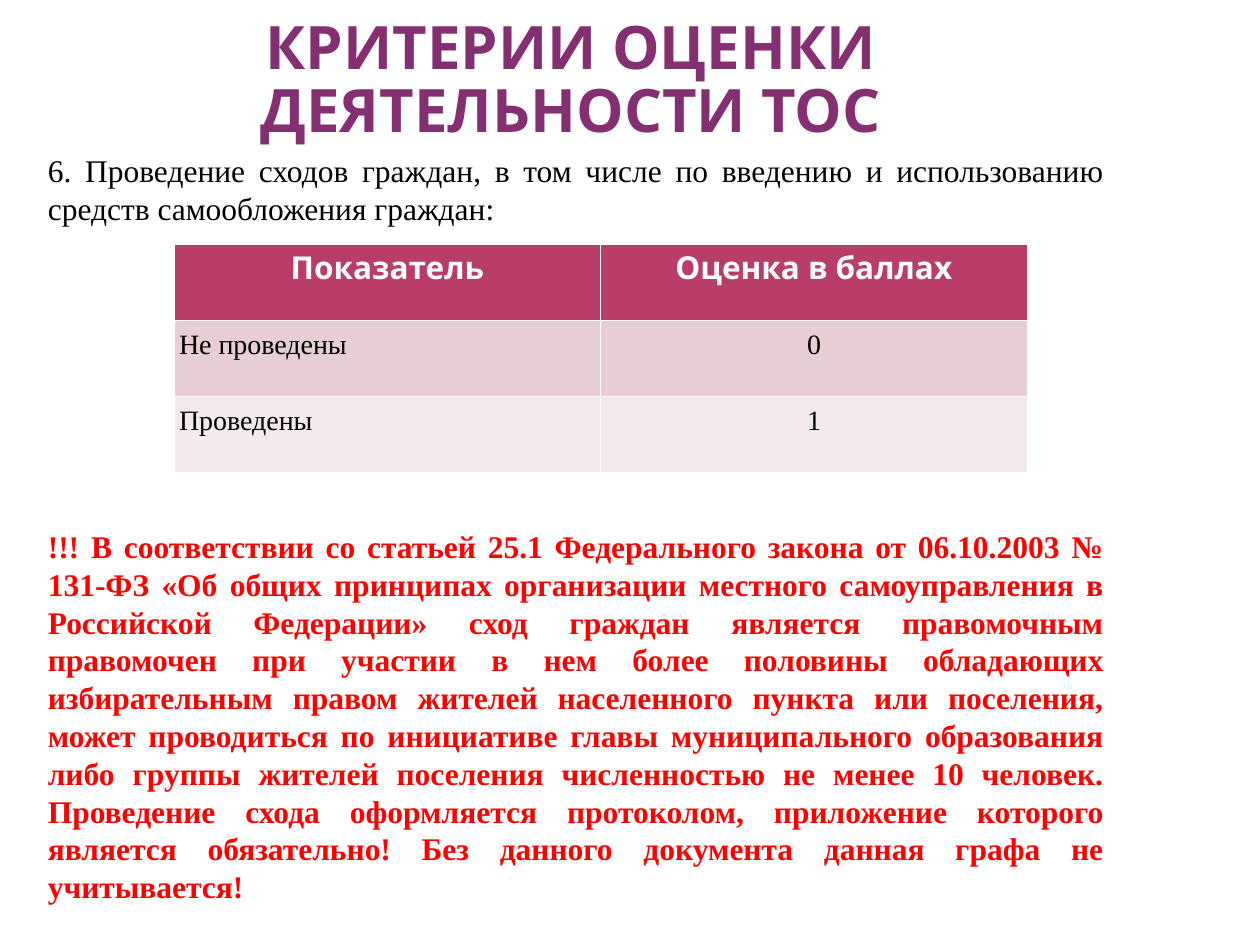
"""Builds the slide with the criteria for assessing TOS activity."""
from dataclasses import dataclass

from lxml.etree import SubElement
from pptx import Presentation
from pptx.dml.color import RGBColor as Rgb
from pptx.enum.text import MSO_ANCHOR as Anchor, MSO_AUTO_SIZE as AutoSize, PP_ALIGN as Align
from pptx.oxml.ns import qn
from pptx.util import Cm, Pt


@dataclass(frozen=True)
class Theme:
    heading_font: str = "Karla"
    text_font: str = "Times New Roman"
    title_size: float = 34.2
    text_size: float = 18
    score_size: float = 16
    title: str = "852F73"
    text: str = "000000"
    warning: str = "FF0000"
    header_text: str = "FFFFFF"
    header_fill: str = "B83D68"
    band_fills: tuple[str, str] = ("E6CED4", "F3E8EB")


@dataclass(frozen=True)
class Box:
    left: float
    top: float
    width: float
    height: float

    def lengths(self) -> tuple:
        return Cm(self.left), Cm(self.top), Cm(self.width), Cm(self.height)


@dataclass(frozen=True)
class TextStyle:
    font: str
    size: float
    color: str
    bold: bool = False


@dataclass(frozen=True)
class Criterion:
    label: str
    score: str


THEME = Theme()
TITLE_STYLE = TextStyle(THEME.heading_font, THEME.title_size, THEME.title, True)
INTRO_STYLE = TextStyle(THEME.text_font, THEME.text_size, THEME.text)
WARNING_STYLE = TextStyle(THEME.text_font, THEME.text_size, THEME.warning, True)
HEADER_STYLE = TextStyle(THEME.heading_font, THEME.text_size, THEME.header_text, True)
SCORE_STYLE = TextStyle(THEME.text_font, THEME.score_size, THEME.text)

TITLE = "КРИТЕРИИ ОЦЕНКИ ДЕЯТЕЛЬНОСТИ ТОС"
INTRO = (
    "6. Проведение сходов граждан, в том числе по введению и использованию "
    "средств самообложения граждан:"
)
WARNING = (
    "!!! В соответствии со статьей 25.1 Федерального закона от 06.10.2003 № 131-ФЗ "
    "«Об общих принципах организации местного самоуправления в Российской Федерации» "
    "сход граждан является правомочным правомочен при участии в нем более половины "
    "обладающих избирательным правом жителей населенного пункта или поселения, может "
    "проводиться по инициативе главы муниципального образования либо группы жителей "
    "поселения численностью не менее 10 человек. Проведение схода оформляется "
    "протоколом, приложение которого является обязательно! Без данного документа "
    "данная графа не учитывается!"
)
CRITERIA = (
    Criterion("Показатель", "Оценка в баллах"),
    Criterion("Не проведены", "0"),
    Criterion("Проведены", "1"),
)


def write(paragraph, text: str, style: TextStyle, align: Align) -> None:
    """Puts styled text into a paragraph."""
    paragraph.text = text
    paragraph.alignment = align
    for run in paragraph.runs:
        run.font.name = style.font
        run.font.size = Pt(style.size)
        run.font.bold = style.bold
        run.font.color.rgb = Rgb.from_string(style.color)


def place(placeholder, box: Box, anchor: Anchor):
    """Moves a placeholder and returns its text frame."""
    placeholder.left, placeholder.top, placeholder.width, placeholder.height = box.lengths()
    frame = placeholder.text_frame
    frame.auto_size = AutoSize.NONE
    frame.word_wrap = True
    frame.vertical_anchor = anchor
    return frame


def add_title(slide, box: Box) -> None:
    """Fills the title placeholder."""
    frame = place(slide.shapes.title, box, Anchor.BOTTOM)
    frame.margin_left = frame.margin_right = Cm(0.13)
    frame.margin_top = frame.margin_bottom = 0
    heading = frame.paragraphs[0]
    write(heading, TITLE, TITLE_STYLE, Align.CENTER)
    heading.line_spacing = 0.87


def add_body(slide, box: Box) -> None:
    """Fills the body placeholder, leaving room for the table."""
    frame = place(slide.placeholders[1], box, Anchor.TOP)
    intro, warning = frame.paragraphs[0], frame.add_paragraph()
    for paragraph, text, style, gap in (
        (intro, INTRO, INTRO_STYLE, 0),
        (warning, WARNING, WARNING_STYLE, 171.6),
    ):
        properties = paragraph._p.get_or_add_pPr()
        properties.set("marL", str(Cm(0.2)))
        properties.set("indent", "0")
        SubElement(properties, qn("a:buNone"))
        write(paragraph, text, style, Align.JUSTIFY)
        paragraph.space_before = Pt(gap)
        paragraph.line_spacing = Pt(21.6)


def fill_cell(cell, text: str, style: TextStyle, align: Align, fill: str) -> None:
    """Writes and colours one table cell."""
    write(cell.text_frame.paragraphs[0], text, style, align)
    cell.fill.solid()
    cell.fill.fore_color.rgb = Rgb.from_string(fill)


def add_scores(slide, box: Box) -> None:
    """Adds the table of indicators and scores."""
    table = slide.shapes.add_table(len(CRITERIA), 2, *box.lengths()).table
    for index, criterion in enumerate(CRITERIA):
        is_header = index == 0
        style = HEADER_STYLE if is_header else SCORE_STYLE
        fill = THEME.header_fill if is_header else THEME.band_fills[(index - 1) % 2]
        label_align = Align.CENTER if is_header else Align.JUSTIFY
        label, score = table.rows[index].cells
        fill_cell(label, criterion.label, style, label_align, fill)
        fill_cell(score, criterion.score, style, Align.CENTER, fill)
        if not is_header:
            for cell in (label, score):
                cell.margin_left = cell.margin_right = Cm(0.1)
                cell.margin_top = cell.margin_bottom = Cm(0.18)


def main() -> None:
    """Builds and saves the presentation."""
    deck = Presentation()
    deck.slide_width, deck.slide_height = Cm(25.4), Cm(19.05)
    slide = deck.slides.add_slide(deck.slide_layouts[1])
    add_title(slide, Box(0.71, 0.53, 21.59, 2.39))
    add_body(slide, Box(0.51, 2.92, 22, 15.19))
    add_scores(slide, Box(3.51, 4.93, 17.2, 4.6))
    deck.save("out.pptx")


if __name__ == "__main__":
    main()
